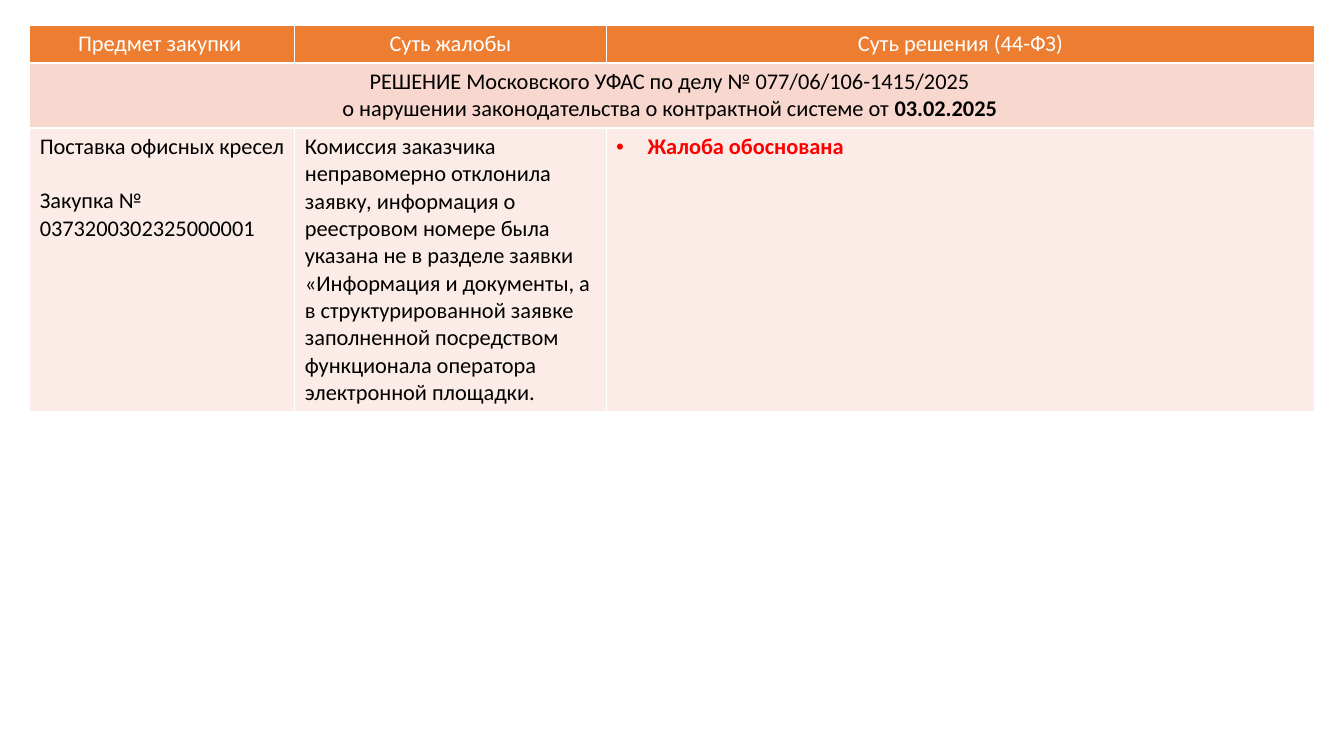
"""Build a slide with a table summarising a procurement complaint decision."""
from lxml.etree import SubElement
from pptx import Presentation
from pptx.dml.color import RGBColor
from pptx.enum.text import PP_ALIGN
from pptx.oxml.ns import qn
from pptx.util import Pt


def rgb(code):
    return RGBColor.from_string(code)


def set_borders(cell, code, width):
    tcPr = cell._tc.get_or_add_tcPr()
    for side in ("a:lnL", "a:lnR", "a:lnT", "a:lnB"):
        ln = SubElement(tcPr, qn(side), w=str(Pt(width)))
        fill = SubElement(ln, qn("a:solidFill"))
        SubElement(fill, qn("a:srgbClr"), val=code)


WHITE, BLACK, RED = "FFFFFF", "000000", "FF0000"
COLUMN_WIDTHS = [189.4, 222.4, 506.2]
ROW_HEIGHTS = [26.4, 46.4, 202.6]
ROW_FILLS = ["ED7D31", "F8D7CE", "FCECE8"]
ROW_COLORS = [WHITE, BLACK, BLACK]
ROWS = [
    ["Предмет закупки ", "Суть жалобы", "Суть решения (44-ФЗ)"],
    ["РЕШЕНИЕ Московского УФАС по делу № 077/06/106-1415/2025 \v"
     "о нарушении законодательства о контрактной системе от ", "", ""],
    ["Поставка офисных кресел\nЗакупка № 0373200302325000001",
     "Комиссия заказчика неправомерно отклонила заявку, информация о реестровом "
     "номере была указана не в разделе заявки «Информация и документы, а в "
     "структурированной заявке заполненной посредством функционала оператора "
     "электронной площадки.",
     "Жалоба обоснована"],
]

prs = Presentation()
prs.slide_width, prs.slide_height = Pt(960), Pt(540)
s = prs.slides.add_slide(prs.slide_layouts[6])

table = s.shapes.add_table(3, 3, Pt(21.2), Pt(18.2), Pt(sum(COLUMN_WIDTHS)),
                           Pt(sum(ROW_HEIGHTS))).table
for column, width in zip(table.columns, COLUMN_WIDTHS):
    column.width = Pt(width)
for row, height in zip(table.rows, ROW_HEIGHTS):
    row.height = Pt(height)
table.cell(1, 0).merge(table.cell(1, 2))

for i, texts in enumerate(ROWS):
    for j, text in enumerate(texts):
        cell = table.cell(i, j)
        set_borders(cell, WHITE, 1)
        cell.fill.solid()
        cell.fill.fore_color.rgb = rgb(ROW_FILLS[i])
        if not text:
            continue
        cell.text_frame.text = text
        if i == 1:
            r = cell.text_frame.paragraphs[0].add_run()
            r.text = "03.02.2025 "
            r.font.bold = True
        for p in cell.text_frame.paragraphs:
            p.alignment = PP_ALIGN.LEFT if i == 2 else PP_ALIGN.CENTER
            for r in p.runs:
                r.font.name = "Calibri"
                r.font.size = Pt(16)
                r.font.bold = bool(r.font.bold)
                r.font.color.rgb = rgb(ROW_COLORS[i])

table.cell(2, 0).text_frame.paragraphs[1].space_before = Pt(19.5)

p = table.cell(2, 2).text_frame.paragraphs[0]
pPr = p._p.get_or_add_pPr()
pPr.set("marL", str(Pt(22.5)))
pPr.set("indent", str(-Pt(22.5)))
SubElement(pPr, qn("a:buFont"), typeface="Arial")
SubElement(pPr, qn("a:buChar"), char="•")
p.runs[0].font.bold = True
p.runs[0].font.color.rgb = rgb(RED)

prs.save("out.pptx")
